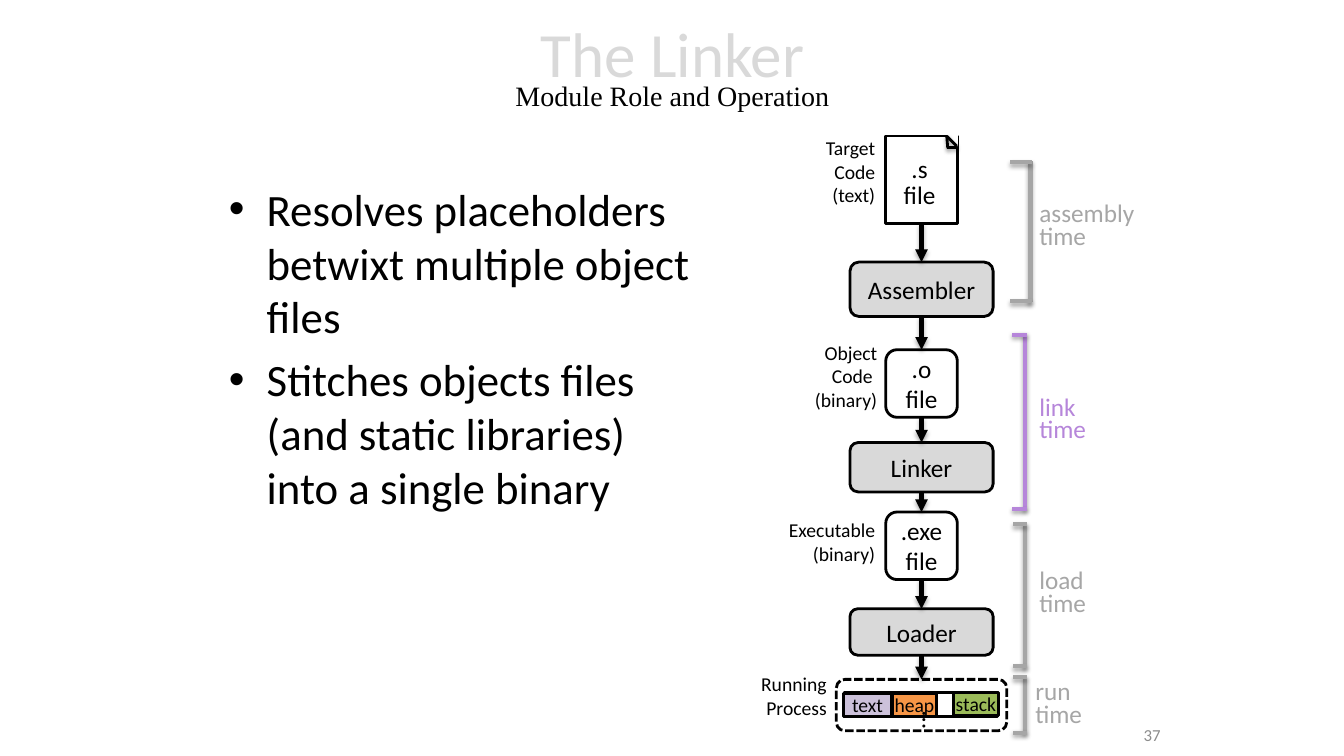
from itertools import pairwise

from lxml import etree
from pptx import Presentation
from pptx.dml.color import RGBColor
from pptx.enum.dml import MSO_LINE
from pptx.enum.shapes import MSO_CONNECTOR, MSO_SHAPE
from pptx.enum.text import MSO_ANCHOR, MSO_AUTO_SIZE, PP_ALIGN
from pptx.oxml.ns import qn
from pptx.util import Inches, Pt

RECT, ROUNDED = MSO_SHAPE.RECTANGLE, MSO_SHAPE.ROUNDED_RECTANGLE
STRAIGHT, DASHED = MSO_CONNECTOR.STRAIGHT, MSO_LINE.SQUARE_DOT
LEFT, CENTER, RIGHT = PP_ALIGN.LEFT, PP_ALIGN.CENTER, PP_ALIGN.RIGHT
TOP, MIDDLE = MSO_ANCHOR.TOP, MSO_ANCHOR.MIDDLE
FIXED, GROW = MSO_AUTO_SIZE.NONE, MSO_AUTO_SIZE.SHAPE_TO_FIT_TEXT
BLACK, WHITE, GRAY, SILVER, PURPLE = "000000", "FFFFFF", "D9D9D9", "A6A6A6", "B686DA"
AXIS = 9.14

STAGES = [
    ("", 1.35, 0.87, 0.71, WHITE, RECT),
    ("Assembler", 2.6, 0.54, 1.42, GRAY, ROUNDED),
    (".o\nfile", 3.47, 0.67, 0.71, WHITE, ROUNDED),
    ("Linker", 4.39, 0.49, 1.42, GRAY, ROUNDED),
    (".exe\nfile", 5.08, 0.67, 0.71, WHITE, ROUNDED),
    ("Loader", 6.04, 0.46, 1.42, GRAY, ROUNDED),
    ("", 6.74, 0.51, 1.69, WHITE, ROUNDED),
]
STAGE_LABELS = [
    ("Target\nCode\n(text)", 8.08, 1.3, 0.7, 0.81),
    ("Object\nCode \n(binary)", 7.97, 3.33, 0.83, 0.81),
    ("Executable\n(binary)", 7.71, 5.09, 1.07, 0.57),
    ("Running\nProcess", 7.44, 6.62, 0.86, 0.57),
]
SEGMENTS = [
    ("", 8.37, 6.87, 1.52, 0.24, WHITE),
    ("stack", 9.46, 6.87, 0.44, 0.23, "9BBB59"),
    ("text", 8.37, 6.88, 0.47, 0.23, "CCC1DA"),
    ("heap", 8.85, 6.88, 0.44, 0.23, "F79646"),
]
PHASES = [
    ("assembly\ntime", SILVER, 10.22, 1.6, 3, 10.02, 10.21, 1.99, 1.21),
    ("link\ntime", PURPLE, 10.17, 3.31, 5.06, 10.04, 10.21, 3.91, 0.67),
    ("load\ntime", SILVER, 10.17, 5.19, 6.62, 10.05, 10.21, 5.63, 0.71),
    ("run\ntime", SILVER, 10.17, 6.71, 7.28, 10.05, 10.17, 6.73, 0.67),
]
FOLD = [(9.39, 1.35, 9.4, 1.47), (9.49, 1.46, 9.39, 1.46), (9.39, 1.35, 9.49, 1.45)]


def rgb(code):
    """Turn a hex string into a colour."""
    return RGBColor.from_string(code)


def style_run(run, size, color=BLACK, font="Calibri"):
    """Set the character format of one run."""
    run.font.size, run.font.name = Pt(size), font
    run.font.color.rgb = rgb(color)


def write(frame, text, size=18, color=BLACK, align=CENTER, anchor=MIDDLE, spacing=None):
    """Fill a text frame, one paragraph per line of text."""
    frame.vertical_anchor = anchor
    for index, line in enumerate(text.split("\n")):
        paragraph = frame.add_paragraph() if index else frame.paragraphs[0]
        paragraph.alignment = align
        if spacing:
            paragraph.line_spacing = spacing
        run = paragraph.add_run()
        run.text = line
        style_run(run, size, color)


class Diagram:
    """Draws styled elements on the current slide."""

    def __init__(self, slide):
        """Keep the slide."""
        self.slide = slide

    def place(self, placeholder, *box):
        """Move a placeholder and fix its size."""
        placeholder.left, placeholder.top, placeholder.width, placeholder.height = map(Inches, box)
        placeholder.text_frame.auto_size = FIXED
        return placeholder.text_frame

    def title(self, heading, subtitle):
        """Write the two-line title."""
        frame = self.place(self.slide.shapes.title, 1.67, 0, 10, 1.45)
        frame.vertical_anchor = MIDDLE
        paragraph = frame.paragraphs[0]
        paragraph.alignment, paragraph.line_spacing = CENTER, 0.7
        first = paragraph.add_run()
        first.text = heading
        style_run(first, 45, GRAY)
        paragraph.add_line_break()
        second = paragraph.add_run()
        second.text = subtitle
        style_run(second, 20, BLACK, "Times New Roman")

    def bullets(self, text):
        """Write the bullet list."""
        frame = self.place(self.slide.placeholders[1], 2.17, 1.75, 4.83, 4.95)
        write(frame, text, size=32, align=LEFT, anchor=TOP)

    def label(self, text, *box, wrap=False, rotation=0, **style):
        """Add a free text label."""
        label = self.slide.shapes.add_textbox(*map(Inches, box))
        label.rotation = rotation
        label.text_frame.word_wrap = wrap
        label.text_frame.auto_size = FIXED if wrap else GROW
        write(label.text_frame, text, **style)

    def box(self, kind, text, *box, fill=WHITE, outline=True, inset=0.1, size=18):
        """Add a filled box with centred text."""
        shape = self.slide.shapes.add_shape(kind, *map(Inches, box))
        shape.shadow.inherit = False
        shape.fill.solid()
        shape.fill.fore_color.rgb = rgb(fill)
        if outline:
            shape.line.color.rgb, shape.line.width = rgb(BLACK), Pt(2)
        else:
            shape.line.fill.background()
        frame = shape.text_frame
        frame.margin_left = frame.margin_right = Inches(inset)
        if text:
            write(frame, text, size=size)
        return shape

    def line(self, *ends, color=BLACK, width=3, arrow=False):
        """Add a straight line with a soft shadow."""
        line = self.slide.shapes.add_connector(STRAIGHT, *map(Inches, ends))
        line.line.color.rgb, line.line.width = rgb(color), Pt(width)
        properties = line.element.spPr
        if arrow:
            etree.SubElement(properties.find(qn("a:ln")), qn("a:tailEnd"), type="triangle")
        effects = etree.SubElement(properties, qn("a:effectLst"))
        shadow = etree.SubElement(effects, qn("a:outerShdw"), blurRad=str(Pt(3.1)),
                                  dist=str(Pt(1.8)), dir="5400000", rotWithShape="0")
        tint = etree.SubElement(shadow, qn("a:srgbClr"), val=BLACK)
        etree.SubElement(tint, qn("a:alpha"), val="35000")

    def bracket(self, color, spine, top, bottom, tip):
        """Add a bracket that opens to the left."""
        self.line(spine, top, spine, bottom, color=color)
        for y in (top + 0.01, bottom - 0.01):
            self.line(spine + 0.02, y, tip, y, color=color)


def main():
    """Build and save the slide."""
    deck = Presentation()
    deck.slide_width, deck.slide_height = Inches(13.33), Inches(7.5)
    diagram = Diagram(deck.slides.add_slide(deck.slide_layouts[1]))

    diagram.title("The Linker", "Module Role and Operation")
    diagram.bullets("Resolves placeholders betwixt multiple object files\n"
                    "Stitches objects files (and static libraries) into a single binary")
    diagram.label("37", 9.28, 7.09, 2.33, 0.4, wrap=True, size=12, color="8C8C8C", align=RIGHT)

    for text, top, height, width, fill, kind in STAGES:
        stage = diagram.box(kind, text, AXIS - width / 2, top, width, height, fill=fill)
    stage.line.dash_style = DASHED
    for (_, top, height, *_), (_, next_top, *_) in pairwise(STAGES):
        diagram.line(AXIS, top + height, AXIS, next_top, arrow=True)

    diagram.box(RECT, "", 9.4, 1.34, 0.1, 0.11, outline=False)
    for crease in FOLD:
        diagram.line(*crease, width=2)
    diagram.label(".s\nfile", 8.86, 1.51, 0.52, 0.63, anchor=TOP, spacing=Pt(18.6))

    for text, *box, fill in SEGMENTS:
        diagram.box(RECT, text, *box, fill=fill, inset=0, size=14)
    for text, *box in STAGE_LABELS:
        diagram.label(text, *box, size=14, align=RIGHT, anchor=TOP)
    for text, color, spine, top, bottom, tip, left, text_top, width in PHASES:
        diagram.bracket(color, spine, top, bottom, tip)
        diagram.label(text, left, text_top, width, 0.56, color=color, align=LEFT,
                      anchor=TOP, spacing=Pt(16))
    diagram.label("…", 9.06, 6.95, 0.38, 0.4, rotation=90, align=LEFT, anchor=TOP)

    deck.save("out.pptx")


if __name__ == "__main__":
    main()
